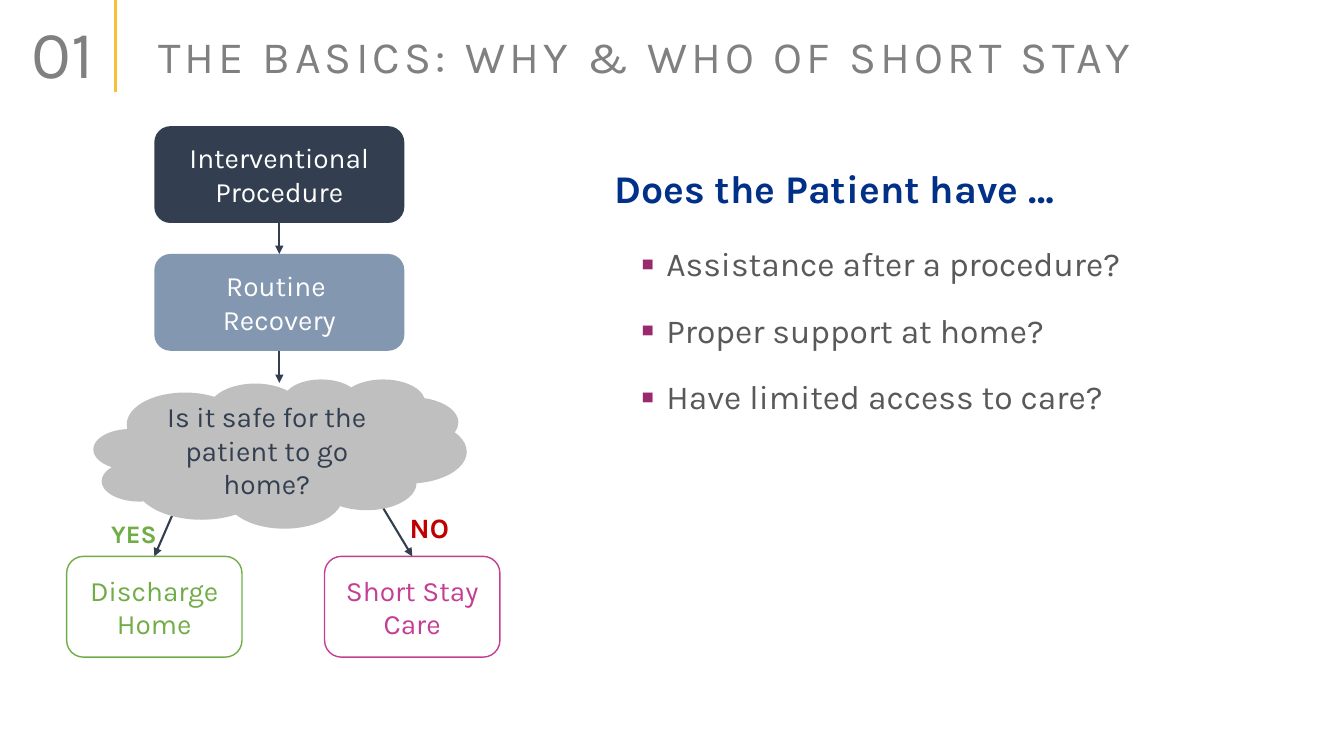
from dataclasses import dataclass

import pptx
import pptx.dml.color
import pptx.enum.shapes
import pptx.enum.text
import pptx.oxml.ns
import pptx.util
from lxml import etree

Cm = pptx.util.Cm
Pt = pptx.util.Pt
Align = pptx.enum.text.PP_ALIGN
Anchor = pptx.enum.text.MSO_ANCHOR
AutoSize = pptx.enum.text.MSO_AUTO_SIZE
Shape = pptx.enum.shapes.MSO_SHAPE
rgb = pptx.dml.color.RGBColor.from_string
qn = pptx.oxml.ns.qn


@dataclass(frozen=True)
class Theme:
    font: str = "Karla"
    grey: str = "808080"
    body_grey: str = "595959"
    gold: str = "F8C035"
    blue: str = "003087"
    navy: str = "333F50"
    steel: str = "8497B0"
    cloud: str = "BFBFBF"
    white: str = "FFFFFF"
    green: str = "70AD47"
    pink: str = "C33F93"
    plum: str = "9A286D"
    red: str = "C00000"
    number_size: int = 48
    title_size: int = 32
    heading_size: int = 28
    list_size: int = 24
    flow_size: int = 20
    yes_size: int = 18


theme = Theme()


def write(frame, lines, size, color, align=Align.LEFT, anchor=Anchor.TOP,
          bold=False, spacing=1.0, bullet=None):
    """Fill a text frame with one evenly formatted paragraph per line."""
    frame.word_wrap = True
    frame.auto_size = AutoSize.NONE
    frame.vertical_anchor = anchor
    frame.text = "\n".join(lines)
    for index, paragraph in enumerate(frame.paragraphs):
        paragraph.alignment = align
        paragraph.line_spacing = spacing
        paragraph.space_before = Pt(10 if index else 0)
        if bullet:
            paragraph.space_after = Pt(6)
            properties = paragraph._p.get_or_add_pPr()
            properties.set("marL", str(Cm(0.64)))
            properties.set("indent", str(-Cm(0.64)))
            bullet_color = etree.SubElement(properties, qn("a:buClr"))
            etree.SubElement(bullet_color, qn("a:srgbClr"), val=theme.plum)
            etree.SubElement(properties, qn("a:buFont"), typeface=theme.font)
            etree.SubElement(properties, qn("a:buChar"), char=bullet)
        paragraph.font.name = theme.font
        paragraph.font.size = Pt(size)
        paragraph.font.bold = bold
        paragraph.font.color.rgb = rgb(color)


def draw_line(start, end, color, width, arrow=True):
    line = slide.shapes.add_connector(
        pptx.enum.shapes.MSO_CONNECTOR.STRAIGHT,
        *(Cm(value) for value in (*start, *end)))
    line.line.color.rgb = rgb(color)
    line.line.width = Pt(width)
    if arrow:
        etree.SubElement(line.line._get_or_add_ln(), qn("a:tailEnd"), type="triangle")
    etree.SubElement(line._element.spPr, qn("a:effectLst"))
    return line


deck = pptx.Presentation()
deck.slide_width, deck.slide_height = Cm(33.87), Cm(19.05)
slide = deck.slides.add_slide(deck.slide_layouts[1])

# Header
title, questions = slide.placeholders
title.left, title.top, title.width, title.height = Cm(3.73), Cm(0.74), Cm(30.12), Cm(1.27)
write(title.text_frame, ["THE BASICS: WHY & WHO OF SHORT STAY"],
      theme.title_size, theme.grey, spacing=0.9)
title.text_frame.paragraphs[0].runs[0]._r.get_or_add_rPr().set("spc", "300")

section_number = slide.shapes.add_textbox(Cm(-1.07), Cm(0.38), Cm(3.68), Cm(1.93))
write(section_number.text_frame, ["01"], theme.number_size, theme.grey,
      align=Align.RIGHT, spacing=0.9)
draw_line((2.9, -0.05), (2.9, 2.31), theme.gold, 2.25, arrow=False)

# Questions about the patient
heading = slide.shapes.add_textbox(Cm(15.24), Cm(3.99), Cm(16.71), Cm(1.65))
write(heading.text_frame, ["Does the Patient have …"], theme.heading_size,
      theme.blue, anchor=Anchor.MIDDLE, bold=True, spacing=0.9)

questions.left, questions.top = Cm(15.9), Cm(5.89)
questions.width, questions.height = Cm(15.21), Cm(10.52)
write(questions.text_frame,
      ["Assistance after a procedure?", "Proper support at home?",
       "Have limited access to care?"],
      theme.list_size, theme.body_grey, spacing=1.1, bullet="▪")

# Flow steps: text, left, top, width, height, fill, outline, text colour
steps = []
for text, left, top, width, height, fill, outline, color in [
    ("Interventional Procedure", 3.89, 3.18, 6.3, 2.44, theme.navy, None, theme.white),
    ("Routine \vRecovery", 3.89, 6.4, 6.3, 2.44, theme.steel, None, theme.white),
    ("Discharge Home", 1.68, 14.02, 4.42, 2.54, None, theme.green, theme.green),
    ("Short Stay Care", 8.18, 14.02, 4.42, 2.54, None, theme.pink, theme.pink),
]:
    step = slide.shapes.add_shape(
        Shape.ROUNDED_RECTANGLE, Cm(left), Cm(top), Cm(width), Cm(height))
    step.shadow.inherit = False
    if fill:
        step.fill.solid()
        step.fill.fore_color.rgb = rgb(fill)
        step.line.fill.background()
    else:
        step.fill.background()
        step.line.color.rgb = rgb(outline)
        step.line.width = Pt(1)
    write(step.text_frame, [text], theme.flow_size, color, Align.CENTER, Anchor.MIDDLE)
    steps.append(step)
procedure, recovery, discharge, short_stay = steps

# Arrows, joined to the steps they touch
for start, end, source, target in [
    ((7.04, 5.62), (7.04, 6.4), procedure, recovery),
    ((7.04, 8.84), (7.04, 9.65), recovery, None),
    ((4.95, 11.58), (3.89, 14.02), None, discharge),
    ((8.92, 11.58), (10.39, 14.02), None, short_stay),
]:
    arrow = draw_line(start, end, theme.navy, 1.5)
    if source:
        arrow.begin_connect(source, 2)
    if target:
        arrow.end_connect(target, 0)

# Answers
for text, left, top, width, height, size, color in [
    ("YES", 2.03, 12.93, 2.69, 1.02, theme.yes_size, theme.green),
    ("NO", 9.7, 12.75, 2.24, 1.12, theme.flow_size, theme.red),
]:
    answer = slide.shapes.add_textbox(Cm(left), Cm(top), Cm(width), Cm(height))
    write(answer.text_frame, [text], size, color, Align.CENTER, bold=True)

# The decision covers the upper ends of the two lower arrows
decision = slide.shapes.add_shape(Shape.CLOUD, Cm(2.36), Cm(9.55), Cm(9.4), Cm(3.76))
decision.shadow.inherit = False
decision.fill.solid()
decision.fill.fore_color.rgb = rgb(theme.cloud)
decision.line.fill.background()
write(decision.text_frame, ["Is it safe for the patient to go home?"],
      theme.flow_size, theme.navy, Align.CENTER, Anchor.MIDDLE)

deck.save("out.pptx")
